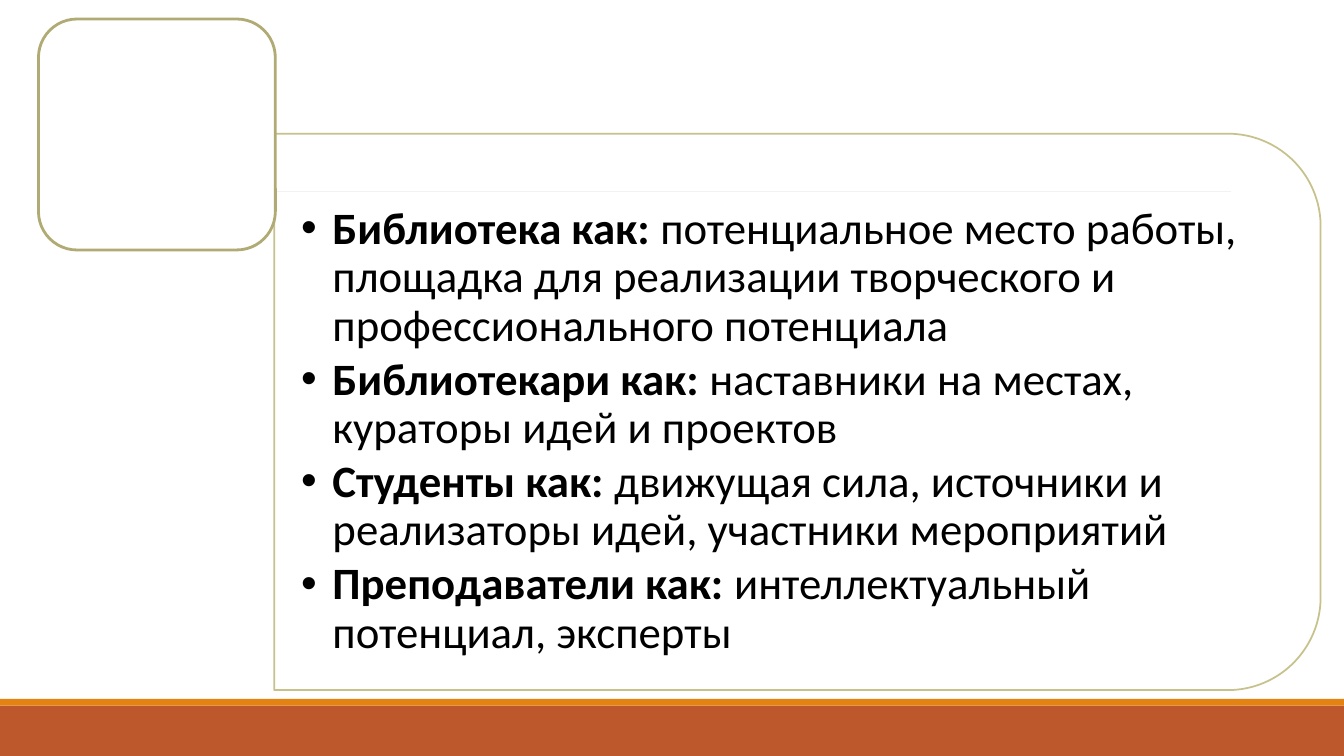
"""Build a slide on the roles of the library, librarians, students and teachers."""
import pptx
import pptx.util
import pptx.dml.color
import pptx.enum.shapes
import pptx.enum.text
import pptx.oxml.ns
import lxml.etree

Cm = pptx.util.Cm
Pt = pptx.util.Pt
RGBColor = pptx.dml.color.RGBColor
SHAPES = pptx.enum.shapes.MSO_SHAPE
qn = pptx.oxml.ns.qn

ROLES = [
    ("Библиотека как: ", "потенциальное место работы, площадка для реализации творческого и профессионального потенциала"),
    ("Библиотекари как: ", "наставники на местах, кураторы идей и проектов"),
    ("Студенты как: ", "движущая сила, источники и реализаторы идей, участники мероприятий"),
    ("Преподаватели как: ", "интеллектуальный потенциал, эксперты"),
]

WHITE = RGBColor(0xFF, 0xFF, 0xFF)
BLACK = RGBColor(0x00, 0x00, 0x00)
RUST = RGBColor(0xBD, 0x58, 0x2C)
ORANGE = RGBColor(0xE4, 0x83, 0x12)
GREY = RGBColor(0x80, 0x80, 0x80)
KHAKI = RGBColor(0xC2, 0xBC, 0x80)
OLIVE = RGBColor(0xB0, 0xAB, 0x74)

SLIDE_WIDTH, SLIDE_HEIGHT = 33.87, 19.05
FOOTER_HEIGHT, STRIPE_HEIGHT = 1.27, 0.17
PANEL_LEFT, PANEL_TOP, PANEL_WIDTH, PANEL_HEIGHT = 6.91, 3.37, 26.37, 14.02
TEXT_LEFT, TEXT_TOP, TEXT_WIDTH, TEXT_HEIGHT = 7.59, 5.18, 24.31, 11.6
BULLET_INDENT = 0.79


def add_box(slide, kind, left, top, width, height, fill, line=None, line_width=0):
    shape = slide.shapes.add_shape(kind, Cm(left), Cm(top), Cm(width), Cm(height))
    shape.shadow.inherit = False
    shape.fill.solid()
    shape.fill.fore_color.rgb = fill
    if line is None:
        shape.line.fill.background()
    else:
        shape.line.color.rgb = line
        shape.line.width = Pt(line_width)
    return shape


def add_separator(slide):
    line = slide.shapes.add_connector(
        pptx.enum.shapes.MSO_CONNECTOR.STRAIGHT, Cm(3.33), Cm(4.83), Cm(31.01), Cm(4.83))
    line.line.color.rgb = GREY
    line.line.width = Pt(0.5)
    lxml.etree.SubElement(line._element.spPr, qn("a:effectLst"))


def add_panel(slide):
    left = PANEL_LEFT + (PANEL_WIDTH - PANEL_HEIGHT) / 2
    top = PANEL_TOP - (PANEL_WIDTH - PANEL_HEIGHT) / 2
    panel = add_box(slide, SHAPES.ROUND_2_SAME_RECTANGLE, left, top,
                    PANEL_HEIGHT, PANEL_WIDTH, WHITE, KHAKI, 1.25)
    panel.rotation = 90
    for color in panel._element.spPr.iter(qn("a:srgbClr")):
        lxml.etree.SubElement(color, qn("a:alpha")).set("val", "90000")


def add_roles(slide):
    frame = slide.shapes.add_textbox(
        Cm(TEXT_LEFT), Cm(TEXT_TOP), Cm(TEXT_WIDTH), Cm(TEXT_HEIGHT)).text_frame
    frame.word_wrap = True
    frame.vertical_anchor = pptx.enum.text.MSO_ANCHOR.TOP
    frame.margin_left = frame.margin_right = frame.margin_top = frame.margin_bottom = 0
    for index, role in enumerate(ROLES):
        paragraph = frame.add_paragraph() if index else frame.paragraphs[0]
        paragraph.line_spacing = 0.9
        paragraph.space_after = Pt(4)
        properties = paragraph._p.get_or_add_pPr()
        properties.set("marL", str(Cm(BULLET_INDENT)))
        properties.set("indent", str(-Cm(BULLET_INDENT)))
        lxml.etree.SubElement(properties, qn("a:buFont")).set("typeface", "Arial")
        lxml.etree.SubElement(properties, qn("a:buChar")).set("char", "•")
        for text, bold in zip(role, (True, False)):
            run = paragraph.add_run()
            run.text = text
            run.font.name = "Calibri"
            run.font.size = Pt(32)
            run.font.bold = bold
            run.font.color.rgb = BLACK


def main():
    presentation = pptx.Presentation()
    presentation.slide_width = Cm(SLIDE_WIDTH)
    presentation.slide_height = Cm(SLIDE_HEIGHT)
    slide = presentation.slides.add_slide(presentation.slide_layouts[6])
    footer_top = SLIDE_HEIGHT - FOOTER_HEIGHT
    add_box(slide, SHAPES.RECTANGLE, 0, footer_top, SLIDE_WIDTH, FOOTER_HEIGHT, RUST)
    add_box(slide, SHAPES.RECTANGLE, 0, footer_top - STRIPE_HEIGHT, SLIDE_WIDTH, STRIPE_HEIGHT, ORANGE)
    add_separator(slide)
    add_panel(slide)
    add_roles(slide)
    add_box(slide, SHAPES.ROUNDED_RECTANGLE, 0.97, 0.48, 5.97, 5.82, WHITE, OLIVE, 2)
    presentation.save("out.pptx")


if __name__ == "__main__":
    main()
